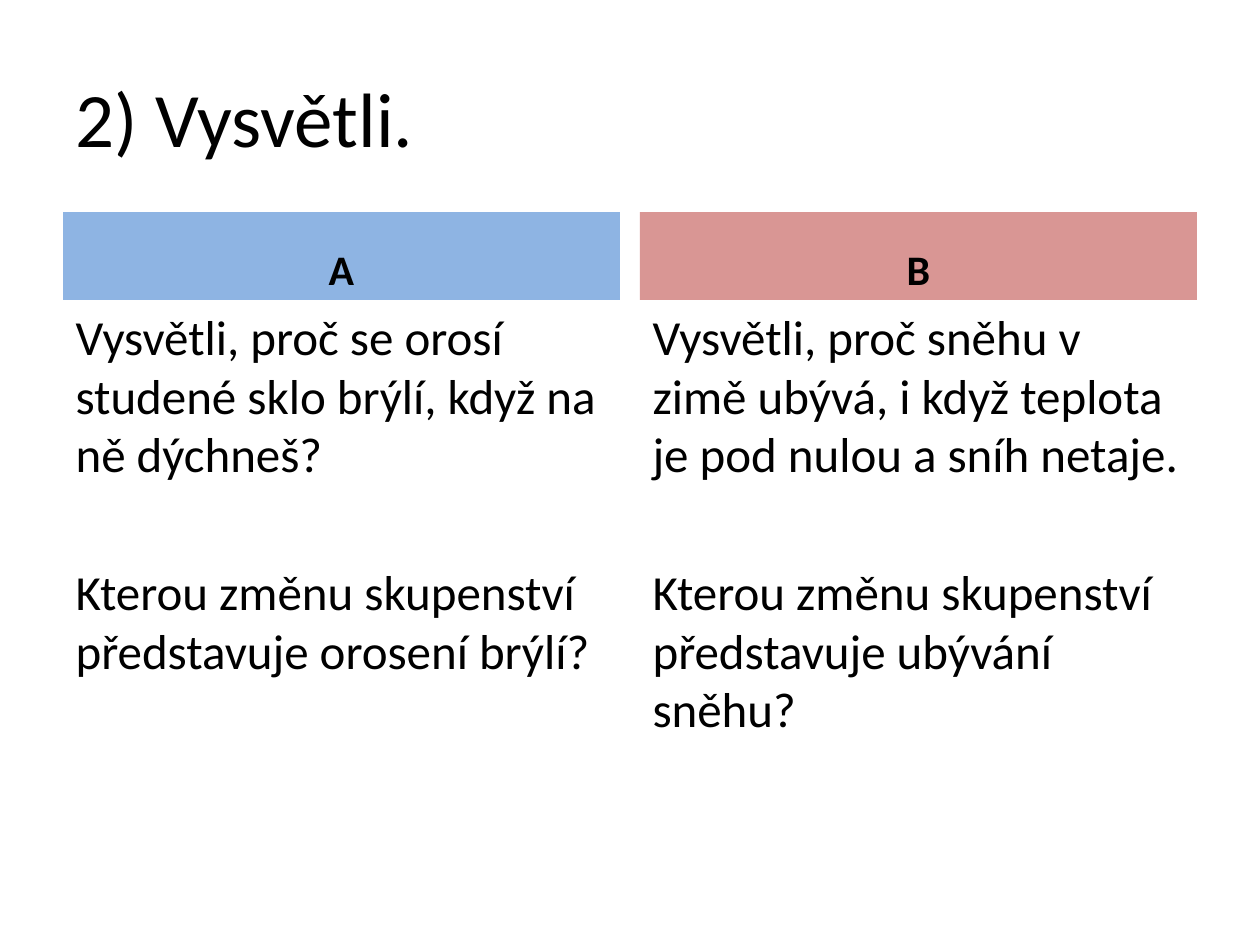
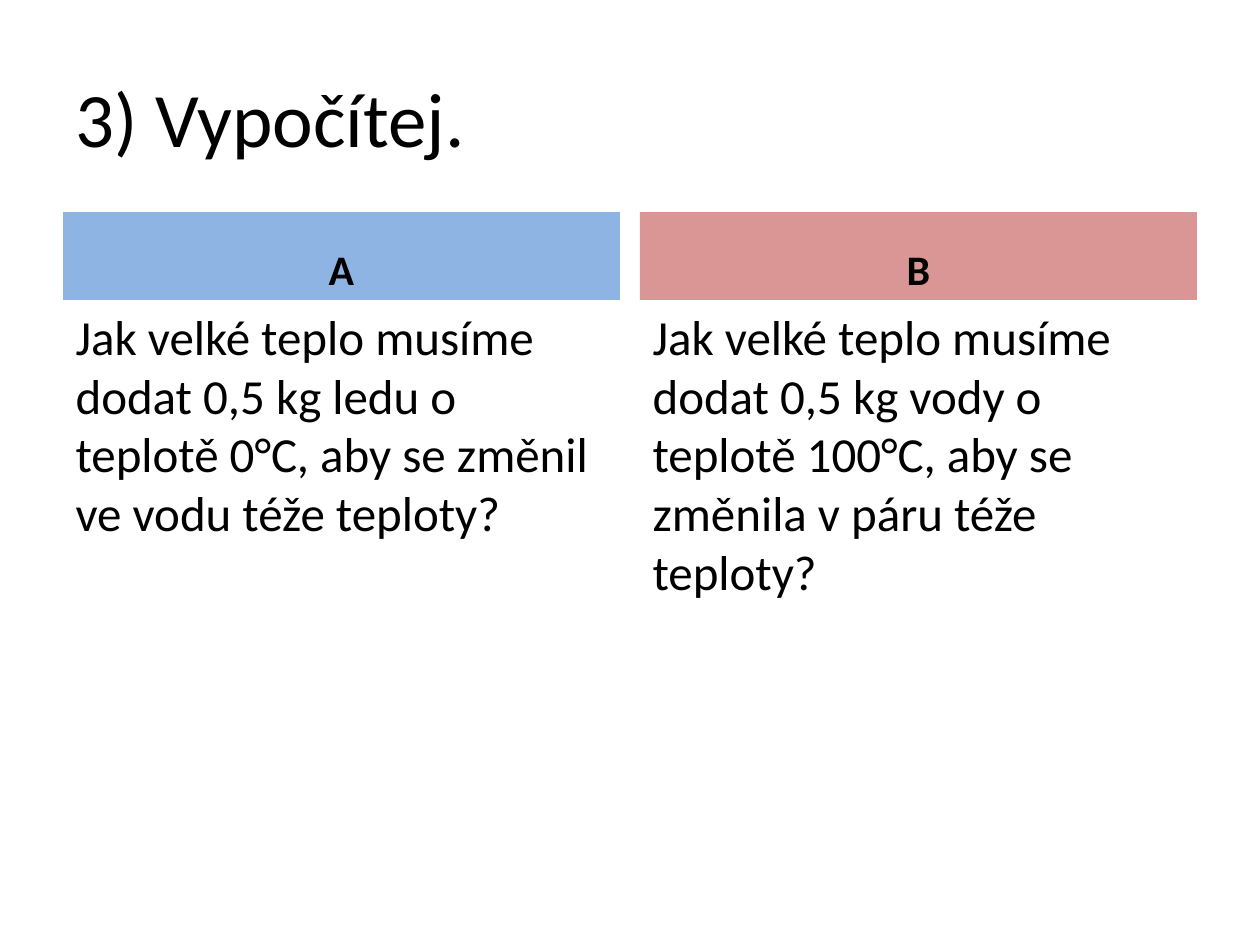
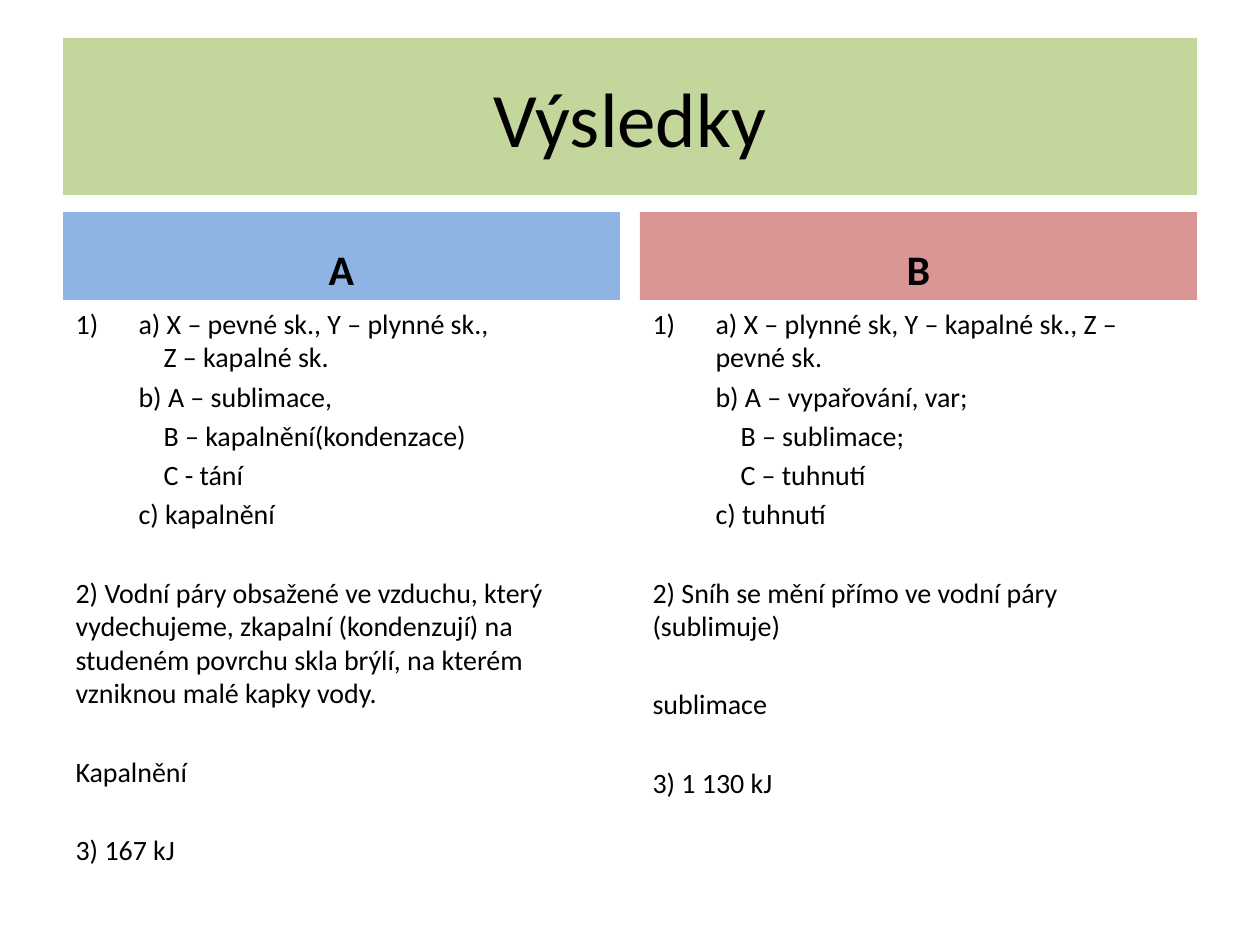
from lxml.etree import SubElement
from pptx import Presentation
from pptx.dml.color import RGBColor
from pptx.enum.text import MSO_ANCHOR as Anchor, MSO_AUTO_SIZE as AutoSize, PP_ALIGN as Align
from pptx.oxml.ns import qn
from pptx.util import Pt

# Content: each column is a list of (paragraph style, text)
SLIDES = [
    {
        "title": "2) Vysvětli.",
        "size": 28,
        "columns": [
            [("plain", "Vysvětli, proč se orosí studené sklo brýlí, když na ně dýchneš?"),
             ("spaced", "Kterou změnu skupenství představuje orosení brýlí?")],
            [("plain", "Vysvětli, proč sněhu v zimě ubývá, i když teplota je pod nulou a sníh netaje."),
             ("spaced", "Kterou změnu skupenství představuje ubývání sněhu?")],
        ],
    },
    {
        "title": "3) Vypočítej.",
        "size": 28,
        "columns": [
            [("plain", "Jak velké teplo musíme dodat 0,5 kg ledu o teplotě 0°C, "
                       "aby se změnil ve vodu téže teploty?")],
            [("plain", "Jak velké teplo musíme dodat 0,5 kg vody o teplotě 100°C, "
                       "aby se změnila v páru téže teploty?")],
        ],
    },
    {
        "title": "Výsledky",
        "size": 16,
        "banner": True,
        "columns": [
            [("numbered", "a) X – pevné sk., Y – plynné sk.,"),
             ("continued", "Z – kapalné sk."),
             ("part", "b) A – sublimace,"),
             ("subpart", "B – kapalnění(kondenzace)"),
             ("subpart", "C - tání"),
             ("part", "c) kapalnění"),
             ("spaced", "2) Vodní páry obsažené ve vzduchu, který vydechujeme, zkapalní (kondenzují) "
                        "na studeném povrchu skla brýlí, na kterém vzniknou malé kapky vody."),
             ("spaced", "Kapalnění"),
             ("spaced", "3) 167 kJ")],
            [("numbered", "a) X – plynné sk, Y – kapalné sk., Z – pevné sk."),
             ("part", "b) A – vypařování, var;"),
             ("subpart", "B – sublimace;"),
             ("subpart", "C – tuhnutí"),
             ("part", "c) tuhnutí"),
             ("spaced", "2) Sníh se mění přímo ve vodní páry (sublimuje)"),
             ("spaced", "sublimace"),
             ("spaced", "3) 1 130 kJ")],
        ],
    },
]

# Shared look
COLORS = {"text": "000000", "A": "8EB4E3", "B": "D99694", "banner": "C3D69B"}
FONT = "Calibri"
PX = 914400 // 126
PAGE = (1260, 945)
MARGIN, GAP = 63, 20
TITLE_TOP, TITLE_HEIGHT = 38, 157
HEADER_TOP, HEADER_HEIGHT = 212, 88
BODY_HEIGHT = 544
CONTENT_WIDTH = PAGE[0] - 2 * MARGIN
COLUMN_WIDTH = (CONTENT_WIDTH - GAP) // 2

# Style: left margin px, first-line indent px, space before as a share of the text size
STYLES = {
    "plain": (0, 0, 0.2),
    "spaced": (0, 0, 1.6),
    "numbered": (63, -63, 0.2),
    "continued": (88, 0, 0),
    "part": (63, 0, 0.2),
    "subpart": (88, 0, 0.2),
}


def place(box, left, top, width, height, fill=None):
    for name, value in zip(("left", "top", "width", "height"), (left, top, width, height)):
        setattr(box, name, value * PX)
    box.text_frame.auto_size = AutoSize.NONE
    box.text_frame.word_wrap = True
    if fill:
        box.fill.solid()
        box.fill.fore_color.rgb = RGBColor.from_string(COLORS[fill])


def write(para, text, size, align, bold=False):
    para.alignment = align
    span = para.add_run()
    span.text = text
    for name, value in {"name": FONT, "size": Pt(size), "bold": bold}.items():
        setattr(span.font, name, value)
    span.font.color.rgb = RGBColor.from_string(COLORS["text"])


def format_paragraph(para, style, size):
    left, indent, before = STYLES[style]
    props = para._p.get_or_add_pPr()
    props.set("marL", str(left * PX))
    props.set("indent", str(indent * PX))
    if style == "numbered":
        SubElement(props, qn("a:buFont"), typeface="+mj-lt")
        SubElement(props, qn("a:buAutoNum"), type="arabicParenR")
    else:
        SubElement(props, qn("a:buNone"))
    para.space_before = Pt(round(size * before, 1))


def fill_body(box, items, size):
    frame = box.text_frame
    for index, (style, text) in enumerate(items):
        para = frame.add_paragraph() if index else frame.paragraphs[0]
        write(para, text, size, Align.LEFT)
        format_paragraph(para, style, size)


def add_page(deck, content):
    page = deck.slides.add_slide(deck.slide_layouts.get_by_name("Comparison"))
    title, *boxes = page.placeholders
    banner = content.get("banner")

    # Title, on a green band for the results
    place(title, MARGIN, TITLE_TOP, CONTENT_WIDTH, TITLE_HEIGHT, "banner" if banner else None)
    title.text_frame.vertical_anchor = Anchor.MIDDLE
    write(title.text_frame.paragraphs[0], content["title"], 44, Align.CENTER if banner else Align.LEFT)

    # Two columns: coloured header above its text
    for index, (label, items) in enumerate(zip("AB", content["columns"])):
        header, body = boxes[2 * index:2 * index + 2]
        left = MARGIN + index * (COLUMN_WIDTH + GAP)
        place(header, left, HEADER_TOP, COLUMN_WIDTH, HEADER_HEIGHT, label)
        header.text_frame.vertical_anchor = Anchor.BOTTOM
        write(header.text_frame.paragraphs[0], label, 24, Align.CENTER, bold=True)
        place(body, left, HEADER_TOP + HEADER_HEIGHT, COLUMN_WIDTH, BODY_HEIGHT)
        fill_body(body, items, content["size"])


def main():
    deck = Presentation()
    deck.slide_width, deck.slide_height = (side * 914400 // 126 for side in PAGE)
    for content in SLIDES:
        add_page(deck, content)
    deck.save("out.pptx")


if __name__ == "__main__":
    main()
